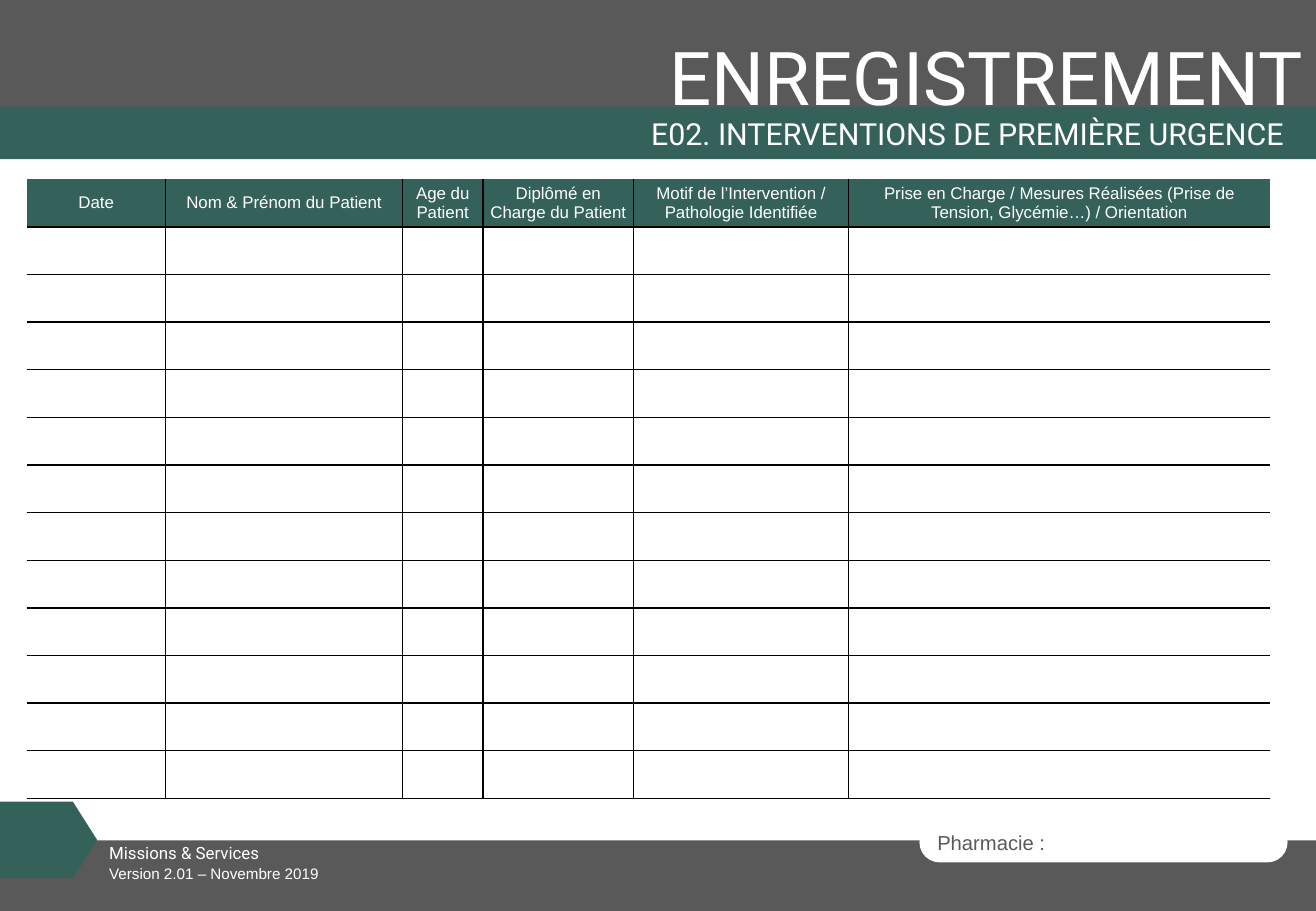
from lxml import etree
from pptx import Presentation, util as u
from pptx.dml.color import RGBColor
from pptx.enum import shapes as s, text as t
from pptx.oxml.ns import qn

GREY, GREEN, WHITE, BLACK = "595959", "34615A", "FFFFFF", "000000"
WIDTH, HEIGHT = 780, 540
KIND = s.MSO_SHAPE
ALIGN = t.PP_ALIGN
TOP, MID = t.MSO_ANCHOR.TOP, t.MSO_ANCHOR.MIDDLE

FOOTER = (KIND.RECTANGLE, (0, 498.2, WIDTH, 41.8), GREY)
FIELD = (KIND.ROUNDED_RECTANGLE, (545, 487.4, 218.2, 23.8), WHITE, 0.5)
ARROW = (KIND.PENTAGON, (0, 475.2, 57.6, 45.4), GREEN, 0.317)
HEADER = (KIND.RECTANGLE, (0, 0, WIDTH, 63.4), GREY)
BAND = (KIND.RECTANGLE, (0, 63.4, WIDTH, 31), GREEN)

PHARMACY = ("Pharmacie :", 12, "Arial", GREY, ALIGN.LEFT, MID)
LABELS = [
    ((57.6, 496.1, 138.2, 19.4),
     ("Missions & Services", 10, "Roboto", WHITE, ALIGN.LEFT, TOP)),
    ((57.6, 509, 423.4, 18),
     ("Version 2.01 – Novembre 2019", 9, "Arial", WHITE, ALIGN.LEFT, TOP)),
]
TITLE = ((359.3, 15.1, 420.5, 60.5),
         ("ENREGISTREMENT", 44, "Roboto", WHITE, ALIGN.RIGHT, TOP))
TOPIC = ((245.5, 67, 522.7, 26.6),
         ("E02. INTERVENTIONS DE PREMIÈRE URGENCE", 18, "Roboto", WHITE,
          ALIGN.RIGHT, MID))

COLUMNS = [
    ("Date", 82.1),
    ("Nom & Prénom du Patient", 140.4),
    ("Age du Patient", 47.8),
    ("Diplômé en Charge du Patient", 89.2),
    ("Motif de l’Intervention / Pathologie Identifiée", 127.4),
    ("Prise en Charge / Mesures Réalisées (Prise de Tension, Glycémie…)"
     " / Orientation", 249.9),
]
ROWS, ROW_H = 13, 28.25
LEFT, UPPER = 16, 106.2


def color(code):
    return RGBColor.from_string(code)


def points(box):
    return [u.Pt(n) for n in box]


def write(frame, words, size, font, code, align, anchor):
    frame.text = words
    frame.word_wrap = True
    frame.vertical_anchor = anchor
    para = frame.paragraphs[0]
    para.alignment = align
    for run in para.runs:
        run.font.size = u.Pt(size)
        run.font.name = font
        run.font.color.rgb = color(code)


def draw(slide, kind, box, code, bend=None):
    shape = slide.shapes.add_shape(kind, *points(box))
    shape.shadow.inherit = False
    shape.fill.solid()
    shape.fill.fore_color.rgb = color(code)
    shape.line.fill.background()
    if bend is not None:
        shape.adjustments[0] = bend
    return shape


def label(slide, box, style):
    frame = slide.shapes.add_textbox(*points(box)).text_frame
    write(frame, *style)
    return frame


def border(cell, side, shown):
    props = cell._tc.get_or_add_tcPr()
    line = etree.SubElement(props, qn("a:ln" + side), w=str(u.Pt(1)))
    if shown:
        fill = etree.SubElement(line, qn("a:solidFill"))
        etree.SubElement(fill, qn("a:srgbClr"), val=BLACK)
    else:
        etree.SubElement(line, qn("a:noFill"))


def grid(slide):
    count = len(COLUMNS)
    total = sum(width for _, width in COLUMNS)
    box = (LEFT, UPPER, total, ROWS * ROW_H)
    table = slide.shapes.add_table(ROWS, count, *points(box)).table
    table.first_row = table.horz_banding = False
    for col, (_, width) in zip(table.columns, COLUMNS):
        col.width = u.Pt(width)
    for i, row in enumerate(table.rows):
        row.height = u.Pt(ROW_H)
        for j, cell in enumerate(row.cells):
            cell.margin_left = cell.margin_right = u.Pt(2.9)
            cell.margin_top = cell.margin_bottom = 0
            sides = {"L": j > 0, "R": j < count - 1, "T": i > 0, "B": True}
            for side, shown in sides.items():
                border(cell, side, shown)
            if i:
                cell.fill.background()
                continue
            cell.fill.solid()
            cell.fill.fore_color.rgb = color(GREEN)
            write(cell.text_frame, COLUMNS[j][0], 10, "Arial", WHITE,
                  ALIGN.CENTER, MID)
            cell.vertical_anchor = MID


def main():
    """Build the emergency intervention record sheet."""
    deck = Presentation()
    deck.slide_width, deck.slide_height = points((WIDTH, HEIGHT))
    slide = deck.slides.add_slide(deck.slide_layouts[6])
    draw(slide, *FOOTER)
    write(draw(slide, *FIELD).text_frame, *PHARMACY)
    draw(slide, *ARROW)
    for box, style in LABELS:
        label(slide, box, style)
    draw(slide, *HEADER)
    label(slide, *TITLE)
    draw(slide, *BAND)
    label(slide, *TOPIC).paragraphs[0].line_spacing = 0.9
    grid(slide)
    deck.save("out.pptx")


if __name__ == "__main__":
    main()
